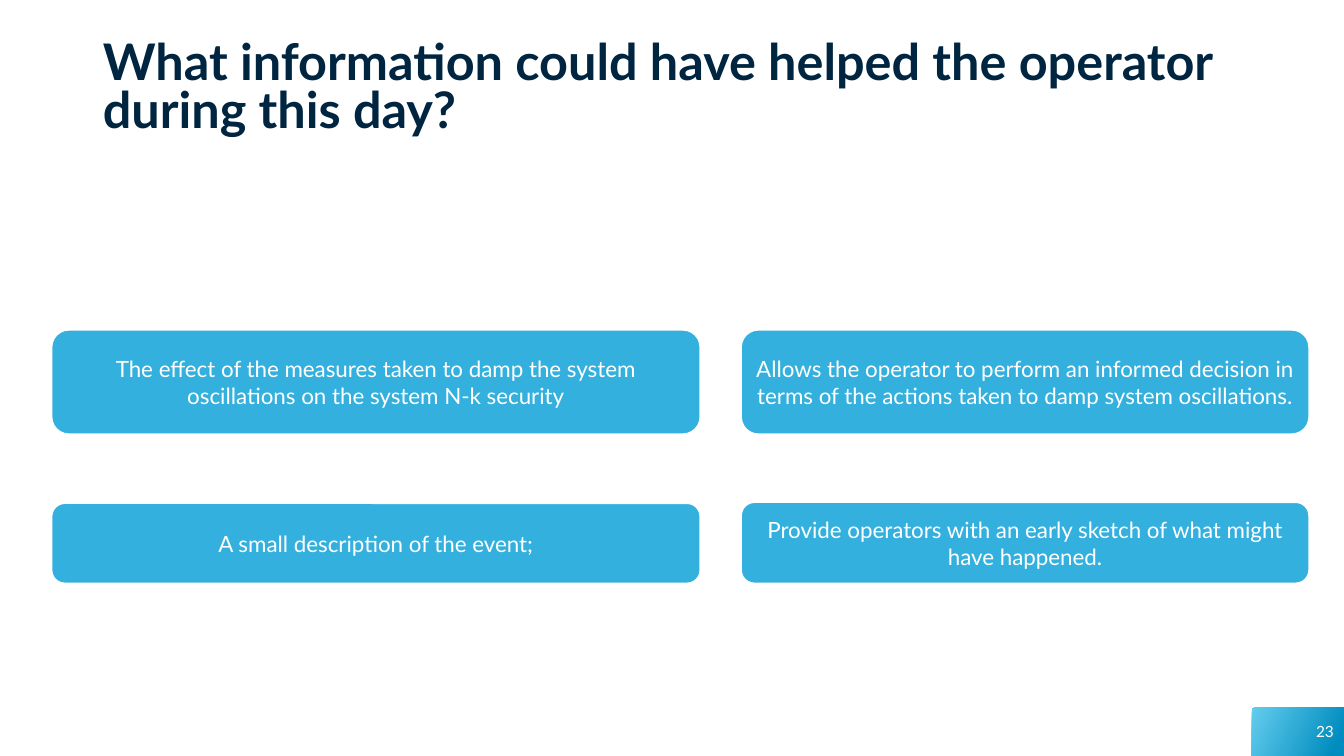
"""Build the slide on information that could have helped the operator."""
import dataclasses

import pptx
import pptx.dml.color
import pptx.enum.shapes
import pptx.enum.text
import pptx.util

Pt = pptx.util.Pt
RGBColor = pptx.dml.color.RGBColor
MSO_SHAPE = pptx.enum.shapes.MSO_SHAPE
PP_ALIGN = pptx.enum.text.PP_ALIGN
MSO_ANCHOR = pptx.enum.text.MSO_ANCHOR

NAVY = RGBColor(0x00, 0x25, 0x40)
BLUE = RGBColor(0x33, 0xB0, 0xDD)
LIGHT_BLUE = RGBColor(0x64, 0xCD, 0xED)
DEEP_BLUE = RGBColor(0x00, 0x8C, 0xBF)
WHITE = RGBColor(0xFF, 0xFF, 0xFF)

TITLE_FONT = {"name": "Lato", "size": Pt(36), "bold": True}
CARD_FONT = {"name": "Lato", "size": Pt(16)}
NUMBER_FONT = {"name": "Lato", "size": Pt(11)}

LEFT_COLUMN = (36.72, 463.68)
RIGHT_COLUMN = (529.2, 406.08)


@dataclasses.dataclass
class Card:
    text: str
    column: tuple[float, float]
    top: float
    height: float


CARDS = [
    Card("A small description of the event;", LEFT_COLUMN, 359.28, 57.6),
    Card("The effect of the measures taken to damp the system oscillations "
         "on the system N-k security", LEFT_COLUMN, 235.44, 74.88),
    Card("Allows the operator to perform an informed decision in terms of "
         "the actions taken to damp system oscillations.",
         RIGHT_COLUMN, 235.44, 74.88),
    Card("Provide operators with an early sketch of what might have happened.",
         RIGHT_COLUMN, 358.56, 58.32),
]


def write(sp, text: str, font: dict, color: RGBColor, align, anchor):
    """Put one formatted paragraph in a shape and return it."""
    tf = sp.text_frame
    tf.word_wrap = True
    tf.auto_size = pptx.enum.text.MSO_AUTO_SIZE.NONE
    tf.vertical_anchor = anchor
    p = tf.paragraphs[0]
    p.alignment = align
    r = p.add_run()
    r.text = text
    for name, value in font.items():
        setattr(r.font, name, value)
    r.font.color.rgb = color
    return p


def add_title(s) -> None:
    """Place and fill the title placeholder."""
    sp = s.shapes.title
    box = {"left": 66.24, "top": 25.92, "width": 828, "height": 104.4}
    for name, value in box.items():
        setattr(sp, name, Pt(value))
    p = write(sp, "What information could have helped the operator during this day?",
              TITLE_FONT, NAVY, PP_ALIGN.LEFT, MSO_ANCHOR.TOP)
    p.line_spacing = 0.8


def add_card(s, card: Card) -> None:
    """Draw one rounded card."""
    left, width = card.column
    sp = s.shapes.add_shape(MSO_SHAPE.ROUNDED_RECTANGLE, Pt(left), Pt(card.top),
                            Pt(width), Pt(card.height))
    sp.shadow.inherit = False
    sp.fill.solid()
    sp.fill.fore_color.rgb = BLUE
    sp.line.color.rgb = WHITE
    sp.line.width = Pt(1.5)
    write(sp, card.text, CARD_FONT, WHITE, PP_ALIGN.CENTER, MSO_ANCHOR.MIDDLE)


def add_page_number(s, number: str) -> None:
    """Draw the gradient corner with the page number."""
    sp = s.shapes.add_shape(MSO_SHAPE.RECTANGLE, Pt(894), Pt(505.4), Pt(66), Pt(34.6))
    sp.shadow.inherit = False
    sp.line.fill.background()
    sp.fill.gradient()
    sp.fill.gradient_angle = 335
    stops = ((0, LIGHT_BLUE), (0.9, DEEP_BLUE))
    for stop, (position, color) in zip(sp.fill.gradient_stops, stops):
        stop.position = position
        stop.color.rgb = color
    write(sp, number, NUMBER_FONT, WHITE, PP_ALIGN.RIGHT, MSO_ANCHOR.MIDDLE)


def main() -> None:
    """Assemble and save the slide."""
    prs = pptx.Presentation()
    prs.slide_width, prs.slide_height = Pt(960), Pt(540)
    s = prs.slides.add_slide(prs.slide_layouts.get_by_name("Title Only"))
    add_page_number(s, "23")
    add_title(s)
    for card in CARDS:
        add_card(s, card)
    prs.save("out.pptx")


if __name__ == "__main__":
    main()
